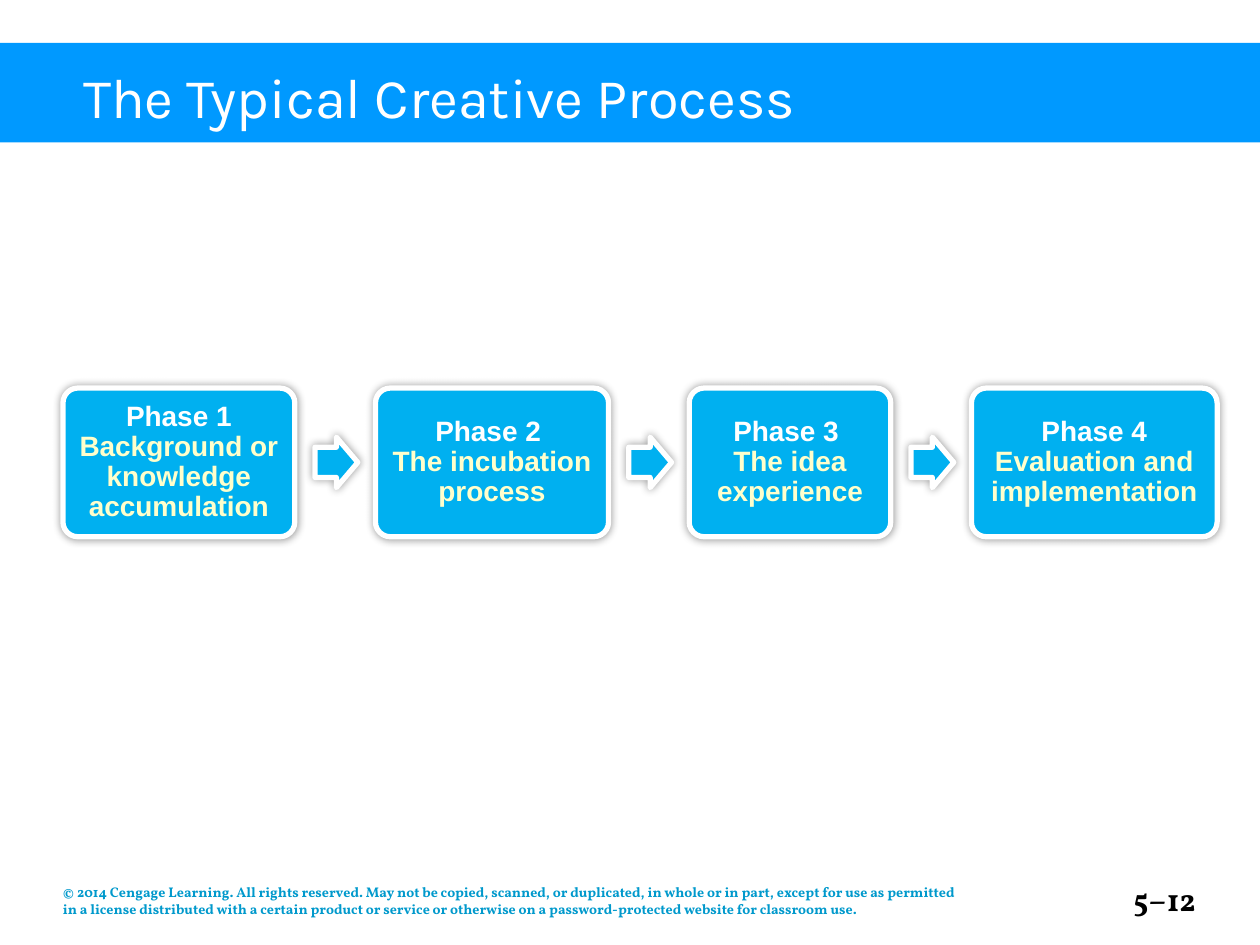
import pptx
import pptx.dml.color
import pptx.enum.shapes
import pptx.enum.text
import pptx.oxml
import pptx.oxml.ns
import pptx.util

Inches = pptx.util.Inches
Kind = pptx.enum.shapes.MSO_SHAPE
Align = pptx.enum.text.PP_ALIGN
Anchor = pptx.enum.text.MSO_ANCHOR

PHASES = [
    (1.84, "Phase 1 ", False, "Background or knowledge accumulation"),
    (1.85, "Phase 2 ", True, "The incubation process"),
    (1.6, "Phase 3 ", True, "The idea experience"),
    (1.95, "Phase 4 ", False, "Evaluation and implementation"),
]
NOTICE = (
    "© 2014 Cengage Learning. All rights reserved. May not be copied, "
    "scanned, or duplicated, in whole or in part, except for use as permitted "
    "in a license distributed with a certain product or service or otherwise "
    "on a password-protected website for classroom use."
)
GLOW = (
    '<a:effectLst %s><a:outerShdw blurRad="63500" dist="0" dir="0">'
    '<a:srgbClr val="000000"><a:alpha val="40000"/></a:srgbClr>'
    "</a:outerShdw></a:effectLst>" % pptx.oxml.ns.nsdecls("a")
)


def color(value):
    """Turn a hex string into a colour."""
    return pptx.dml.color.RGBColor.from_string(value)


def add_run(para, text, font, size, shade, bold=True):
    """Add one styled run to a paragraph."""
    run = para.add_run()
    run.text = text
    run.font.name = font
    run.font.size = pptx.util.Pt(size)
    run.font.bold = bold
    run.font.color.rgb = color(shade)


def set_frame(shape, margins, anchor, align):
    """Set up a shape's text frame and return its first paragraph."""
    frame = shape.text_frame
    frame.word_wrap = True
    frame.vertical_anchor = anchor
    left, top, right, bottom = map(Inches, margins)
    frame.margin_left, frame.margin_top = left, top
    frame.margin_right, frame.margin_bottom = right, bottom
    para = frame.paragraphs[0]
    para.alignment = align
    return para


def add_block(slide, kind, place, fill):
    """Add a plain filled shape without line or shadow."""
    shape = slide.shapes.add_shape(kind, *map(Inches, place))
    shape.shadow.inherit = False
    shape.fill.solid()
    shape.fill.fore_color.rgb = color(fill)
    shape.line.fill.background()
    return shape


def add_card(slide, kind, place, *adjust):
    """Add a blue shape with a white outline and a soft shadow."""
    shape = add_block(slide, kind, place, "00B0F0")
    shape.line.color.rgb = color("FFFFFF")
    shape.line.width = pptx.util.Pt(3)
    for index, value in enumerate(adjust):
        shape.adjustments[index] = value
    props = shape.element.spPr
    props.remove(props.find(pptx.oxml.ns.qn("a:effectLst")))
    props.append(pptx.oxml.parse_xml(GLOW))
    return shape


def add_title(slide, text):
    """Add the title band."""
    band = add_block(slide, Kind.RECTANGLE, (0, 0.34, 10, 0.79), "0099FF")
    para = set_frame(band, (0.66, 0.15, 0.1, 0.1), Anchor.MIDDLE, Align.LEFT)
    add_run(para, text, "Karla", 32, "FFFFFF", False)


def add_phase(slide, left, width, label, split, text):
    """Add one phase card with its label and text."""
    card = add_card(slide, Kind.ROUNDED_RECTANGLE, (left, 3.08, width, 1.18), 0.1)
    para = set_frame(card, [0.04] * 4, Anchor.MIDDLE, Align.CENTER)
    para.line_spacing = 0.9
    add_run(para, label, "Arial", 16, "FFFFFF")
    if split:
        para.add_line_break()
    add_run(para, text, "Arial", 16, "FFFFCC")


def add_note(slide, place, text, size, shade, align):
    """Add a footer text box."""
    box = slide.shapes.add_textbox(*map(Inches, place))
    para = set_frame(box, (0, 0.05, 0, 0.05), Anchor.BOTTOM, align)
    add_run(para, text, "Vollkorn", size, shade)


def main():
    """Build the slide and save it."""
    deck = pptx.Presentation()
    deck.slide_width, deck.slide_height = Inches(10), Inches(7.5)
    slide = deck.slides.add_slide(deck.slide_layouts[6])
    add_title(slide, "The Typical Creative Process")
    left = 0.5
    for index, (width, label, split, text) in enumerate(PHASES):
        if index:
            place = (left - 0.48, 3.47, 0.34, 0.4)
            add_card(slide, Kind.RIGHT_ARROW, place, 0.6, 0.5)
        add_phase(slide, left, width, label, split, text)
        left += width + 0.64
    add_note(slide, (0.5, 7, 7.17, 0.33), NOTICE, 8, "0099CC", Align.LEFT)
    add_note(slide, (8.07, 7.08, 1.42, 0.25), "5–12", 18, "000000", Align.RIGHT)
    deck.save("out.pptx")


if __name__ == "__main__":
    main()
